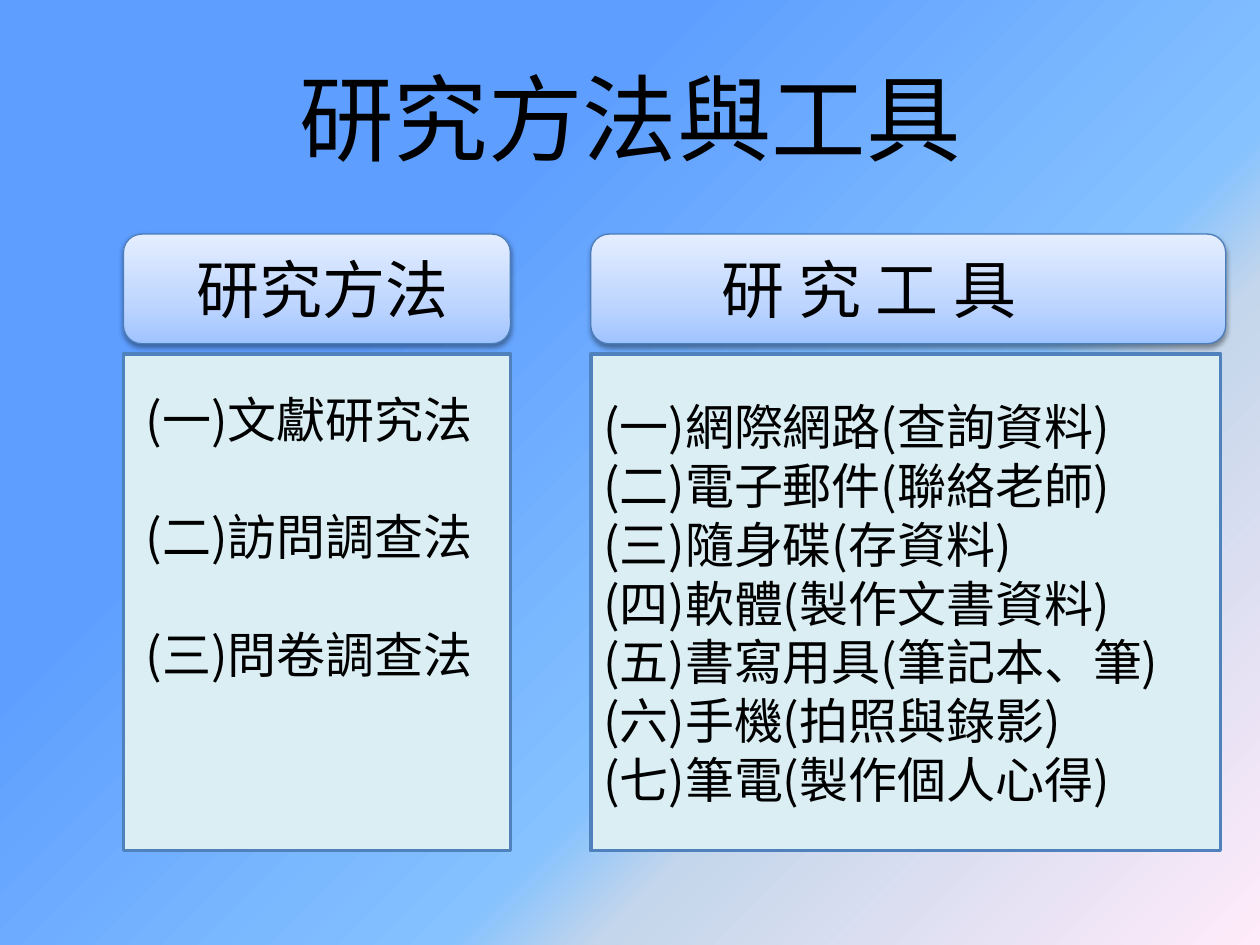
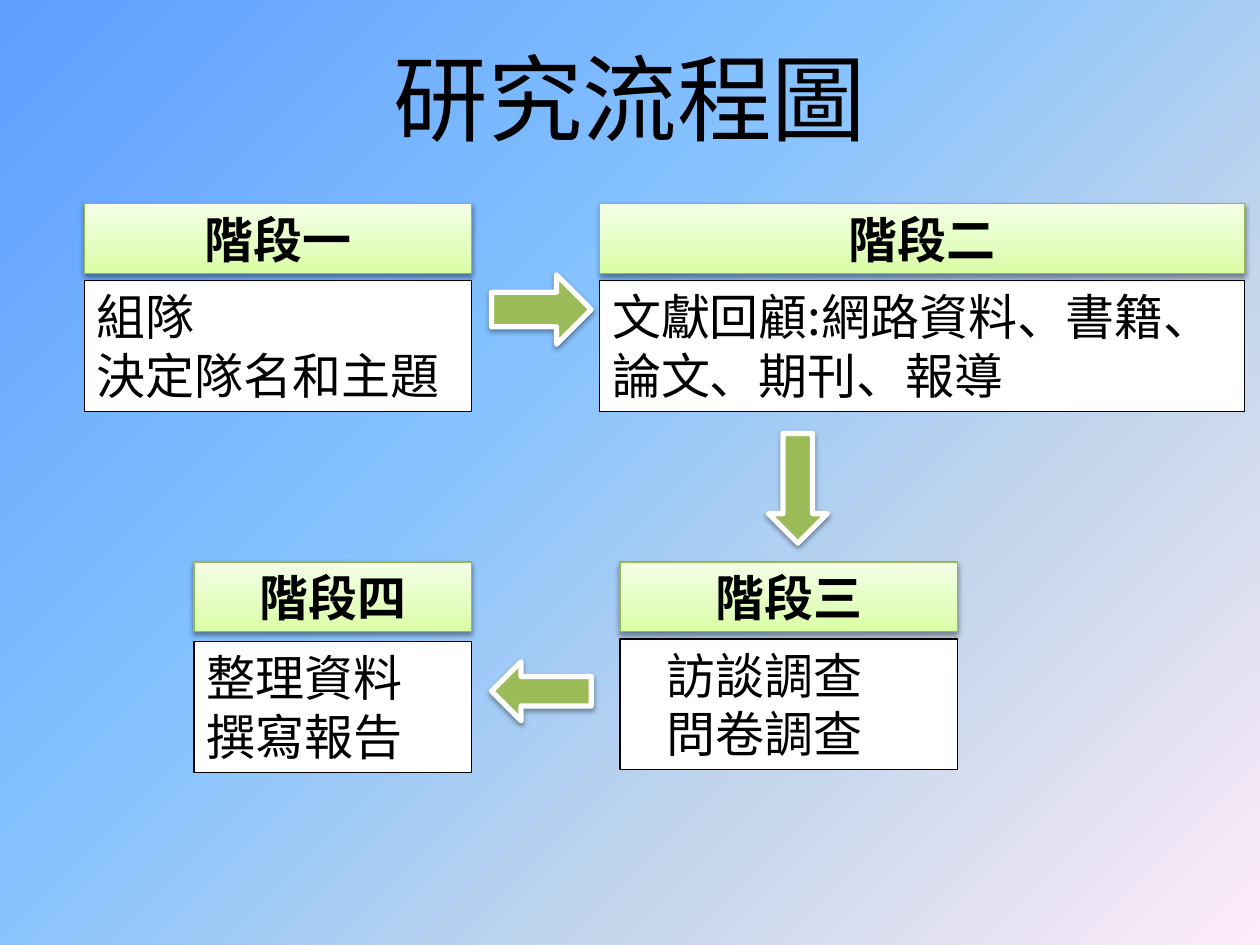
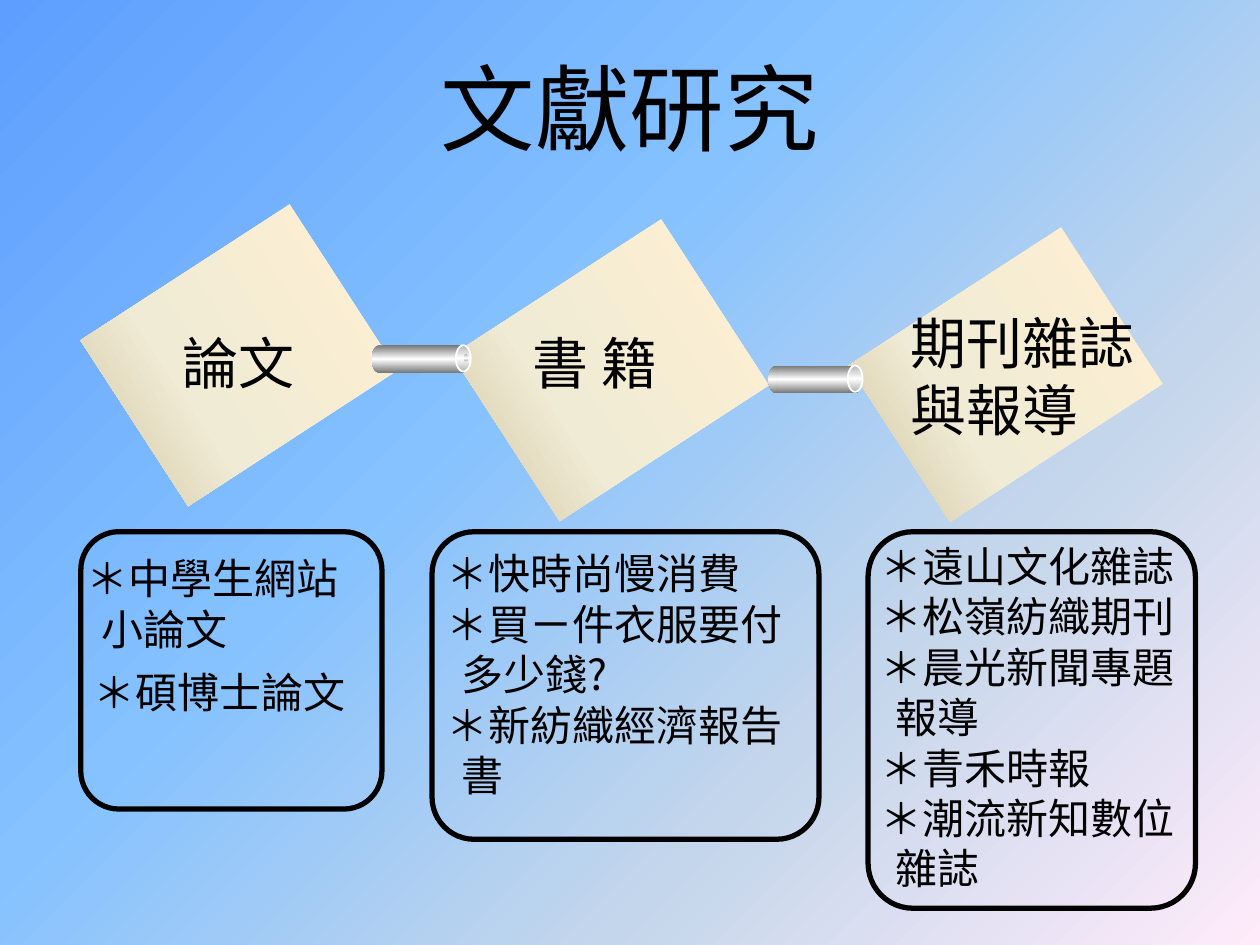
import pptx
import pptx.util
import pptx.dml.color
import pptx.enum.shapes
import pptx.enum.text
import pptx.oxml.ns
import lxml.etree

Cm = pptx.util.Cm
Pt = pptx.util.Pt
qn = pptx.oxml.ns.qn
RGB = pptx.dml.color.RGBColor.from_string
SHAPE = pptx.enum.shapes.MSO_SHAPE
MIDDLE = pptx.enum.text.MSO_ANCHOR.MIDDLE
TOP = pptx.enum.text.MSO_ANCHOR.TOP
CENTER = pptx.enum.text.PP_ALIGN.CENTER
LEFT = pptx.enum.text.PP_ALIGN.LEFT
FONT = "Noto Sans CJK SC"

COLORS = {
    "black": "000000", "white": "FFFFFF",
    "sky": "5E9EFF", "light sky": "85C2FF", "haze": "C4D6EB", "pink": "FFEBFA",
    "blue low": "9FC3FF", "blue mid": "BDD5FF", "blue high": "E4EEFF",
    "blue edge": "4A7DBA", "panel": "DAEEF3", "panel edge": "4F81BD",
    "green low": "DAFEA4", "green mid": "E3FEBF", "green high": "F4FEE6",
    "green edge": "97B853", "arrow": "9BBB59",
    "paper high": "FFEFD1", "paper mid": "F0EBD5", "paper low": "D1C39F",
    "steel": "767676", "silver": "B3B3B3",
}
GRADIENTS = {
    "late sky": (315, [(31, "sky"), (63, "light sky"), (70, "haze"), (100, "pink")]),
    "early sky": (315, [(0, "sky"), (40, "light sky"), (70, "haze"), (100, "pink")]),
    "blue": (90, [(0, "blue low"), (35, "blue mid"), (100, "blue high")]),
    "green": (90, [(0, "green low"), (35, "green mid"), (100, "green high")]),
    "paper": (270, [(0, "paper high"), (65, "paper mid"), (100, "paper low")]),
    "pipe": (270, [(0, "steel"), (50, "white"), (100, "steel")]),
    "pipe end": (270, [(0, "silver"), (50, "white"), (100, "silver")]),
}
gradient_fills = []


def draw(page, kind, place, fill=None, edge=None, width=0.75, shadow=False):
    shape = page.shapes.add_shape(kind, *map(Cm, place))
    shape.shadow.inherit = False
    if fill in GRADIENTS:
        gradient_fills.append((shape, shape.fill, fill))
    elif fill:
        shape.fill.solid()
        shape.fill.fore_color.rgb = RGB(COLORS[fill])
    else:
        shape.fill.background()
    if edge:
        shape.line.color.rgb = RGB(COLORS[edge])
        shape.line.width = Pt(width)
    else:
        shape.line.fill.background()
    if shadow:
        effects = shape.element.spPr.find(qn("a:effectLst"))
        outer = lxml.etree.SubElement(
            effects, qn("a:outerShdw"), blurRad=str(Pt(3.1)), dist=str(Pt(1.6)),
            dir="5400000", rotWithShape="0")
        tint = lxml.etree.SubElement(outer, qn("a:srgbClr"), val=COLORS["black"])
        lxml.etree.SubElement(tint, qn("a:alpha"), val="38000")
    return shape


def write(box, lines, size, bold=False, hang=0, frame_format={}, para_format={}):
    frame = box.text_frame
    for name, value in {"word_wrap": True, "vertical_anchor": TOP, **frame_format}.items():
        setattr(frame, name, value)
    for number, line in enumerate(lines):
        para = frame.add_paragraph() if number else frame.paragraphs[0]
        for name, value in {"alignment": LEFT, **para_format}.items():
            setattr(para, name, value)
        if hang:
            properties = para._p.get_or_add_pPr()
            properties.set("marL", str(Cm(hang)))
            properties.set("indent", str(-Cm(hang)))
        span = para.add_run()
        span.text = line
        for name, value in {"name": FONT, "size": Pt(size), "bold": bold}.items():
            setattr(span.font, name, value)
        span.font.color.rgb = RGB(COLORS["black"])
        lxml.etree.SubElement(span.font._element, qn("a:ea"), typeface=FONT)


deck = pptx.Presentation()
deck.slide_width = Cm(25.4)
deck.slide_height = Cm(19.05)

pages = []
for title, top, backdrop in [
    ("研究方法與工具", 0.76, "late sky"),
    ("研究流程圖", 0.36, "early sky"),
    ("文獻研究", 0.56, "early sky"),
]:
    page = deck.slides.add_slide(deck.slide_layouts[6])
    gradient_fills.append((page, page.background.fill, backdrop))
    title_box = page.shapes.add_textbox(Cm(1.27), Cm(top), Cm(22.86), Cm(3.18))
    write(title_box, [title], 54, frame_format={"vertical_anchor": MIDDLE},
          para_format={"alignment": CENTER})
    pages.append(page)
methods_page, flow_page, literature_page = pages

panels = []
for heading, left, header_width, panel_width, label_left, label_width in [
    ("研究方法", 2.49, 7.8, 7.8, 3.71, 7.19),
    ("研 究 工 具", 11.91, 12.8, 12.7, 14.3, 10.01),
]:
    draw(methods_page, SHAPE.ROUNDED_RECTANGLE, (left, 4.72, header_width, 2.21),
         "blue", "blue edge", shadow=True)
    label = methods_page.shapes.add_textbox(Cm(label_left), Cm(4.93), Cm(label_width), Cm(1.8))
    write(label, [heading], 36)
    panels.append(draw(methods_page, SHAPE.RECTANGLE, (left, 7.14, panel_width, 10.01),
                       "panel", "panel edge", 2))

write(panels[1], [
    "(一)網際網路(查詢資料)",
    "(二)電子郵件(聯絡老師)",
    "(三)隨身碟(存資料)",
    "(四)軟體(製作文書資料)",
    "(五)書寫用具(筆記本、筆)",
    "(六)手機(拍照與錄影)",
    "(七)筆電(製作個人心得)",
], 28, frame_format={"vertical_anchor": MIDDLE})
methods_box = methods_page.shapes.add_textbox(Cm(2.69), Cm(7.72), Cm(8), Cm(6.25))
write(methods_box, ["(一)文獻研究法", "(二)訪問調查法", "(三)問卷調查法"], 28,
      para_format={"space_after": Pt(33.5)})

for stage, left, top, width, body_top, inset, lines in [
    ("階段一", 1.7, 4.11, 7.8, 5.66, 0.25, ["組隊", "決定隊名和主題"]),
    ("階段二", 12.09, 4.11, 13, 5.66, 0.25, ["文獻回顧:網路資料、書籍、論文、期刊、報導"]),
    ("階段三", 12.5, 11.33, 6.81, 12.88, 0.94, ["訪談調查", "問卷調查"]),
    ("階段四", 3.91, 11.33, 5.59, 12.93, 0.25, ["整理資料", "撰寫報告"]),
]:
    body = draw(flow_page, SHAPE.RECTANGLE, (left, body_top, width, 2.64), "white", "black")
    write(body, lines, 28, frame_format={"margin_left": Cm(inset)})
    header = draw(flow_page, SHAPE.RECTANGLE, (left, top, width, 1.4),
                  "green", "green edge", shadow=True)
    write(header, [stage], 28, bold=True, frame_format={"vertical_anchor": MIDDLE},
          para_format={"alignment": CENTER})

for kind, place in [
    (SHAPE.RIGHT_ARROW, (9.91, 5.54, 2.01, 1.4)),
    (SHAPE.DOWN_ARROW, (15.49, 8.74, 1.19, 2.21)),
    (SHAPE.LEFT_ARROW, (9.91, 13.34, 2.01, 1.19)),
]:
    draw(flow_page, kind, place, "arrow", "white", 3, shadow=True)

for left, width, height in [(17.5, 6.6, 7.59), (8.71, 7.8, 6.2), (1.63, 6.07, 5.59)]:
    outline = draw(literature_page, SHAPE.ROUNDED_RECTANGLE, (left, 10.72, width, height),
                   edge="black", width=3)
    outline.adjustments[0] = 0.137

for place in [(18.39, 5, 3.76, 5.11), (10.31, 4.95, 3.99, 5.03), (2.82, 4.65, 3.99, 5.03)]:
    draw(literature_page, SHAPE.RECTANGLE, place, "paper").rotation = 57

for cap_left, tube_left, end_left, top in [(7.49, 7.7, 9.19, 6.96), (15.49, 15.65, 17.09, 7.37)]:
    draw(literature_page, SHAPE.OVAL, (cap_left, top, 0.33, 0.56), "pipe")
    draw(literature_page, SHAPE.RECTANGLE, (tube_left, top, 1.65, 0.56), "pipe")
    draw(literature_page, SHAPE.OVAL, (end_left, top, 0.3, 0.53), "pipe end", "white", 1)
draw(literature_page, SHAPE.OVAL, (9.35, 7.14, 0.08, 0.15), "pipe end")

for place, size, hang, lines in [
    ((3.43, 6.5, 6.48, 1.63), 32, 0, ["論文"]),
    ((10.49, 6.5, 3.4, 1.63), 32, 0, ["書 籍"]),
    ((18.11, 6.1, 5.79, 3.23), 32, 0, ["期刊雜誌", "與報導"]),
    ((1.5, 11.02, 6.07, 2.31), 24, 0.3, ["＊中學生網站小論文"]),
    ((8.76, 10.92, 7.39, 6.4), 24, 0.3,
     ["＊快時尚慢消費", "＊買ㄧ件衣服要付多少錢?", "＊新紡織經濟報告書"]),
    ((17.5, 10.77, 7.11, 7.57), 24, 0.3,
     ["＊遠山文化雜誌", "＊松嶺紡織期刊", "＊晨光新聞專題報導", "＊青禾時報", "＊潮流新知數位雜誌"]),
    ((1.63, 13.31, 5.59, 2.31), 24, 0, ["＊碩博士論文"]),
]:
    write(literature_page.shapes.add_textbox(*map(Cm, place)), lines, size, hang=hang)

for owner, fill, gradient in gradient_fills:
    angle, stops = GRADIENTS[gradient]
    fill.gradient()
    fill.gradient_angle = angle
    stop_list = owner.element.find(".//" + qn("a:gsLst"))
    for stop in list(stop_list):
        stop_list.remove(stop)
    for position, color in stops:
        stop = lxml.etree.SubElement(stop_list, qn("a:gs"), pos=str(position * 1000))
        tint = lxml.etree.SubElement(stop, qn("a:srgbClr"), val=COLORS[color])
        if color == "sky":
            lxml.etree.SubElement(tint, qn("a:alpha"), val="82000")

deck.save("out.pptx")
